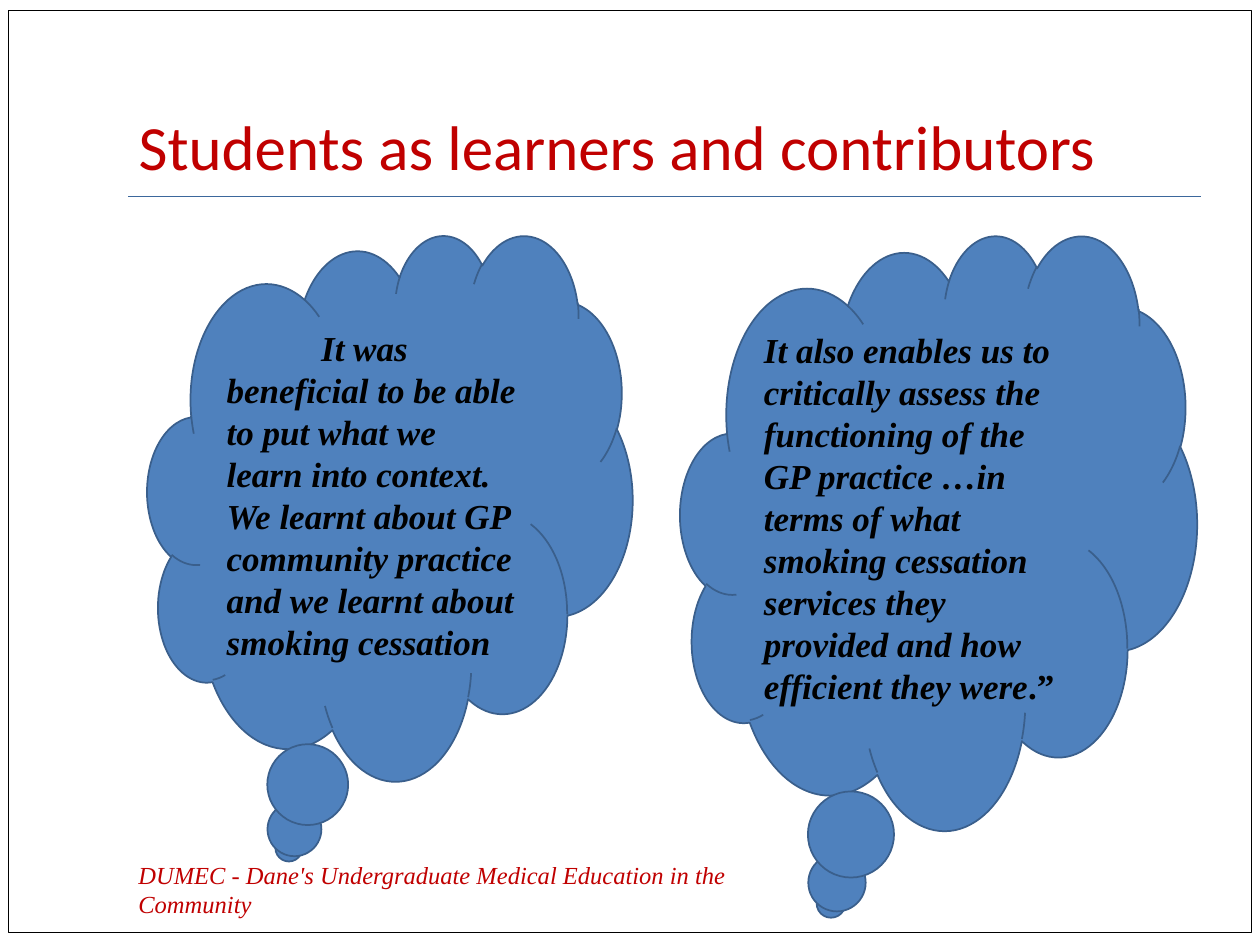
from pptx import Presentation, util as u
from pptx.dml.color import RGBColor
from pptx.enum import shapes, text
from pptx.oxml.ns import qn
from lxml import etree

COLORS = {"paper": "FFFFFF", "ink": "000000", "accent": "C00000",
          "cloud": "4F81BD", "edge": "3A5F8C", "rule": "3B679C"}
COLS, ROWS = 20, 15
QUOTES = [
    ((10.8, 3.72, 8.2, 9.44), 0,
     [("It also enables us to critically assess the functioning of the GP practice …in terms "
       "of what smoking cessation services they provided and how efficient they were", True),
      (".”", False)]),
    ((2.34, 3.72, 7.7, 8.66), 0.75,
     [("It was beneficial to be able to put what we learn into context. We learnt about GP "
       "community practice and we learnt about smoking cessation", True)]),
]


class Deck:
    """Holds the style, the grid and the current slide."""

    def __init__(self):
        self.prs = Presentation()
        self.prs.slide_width, self.prs.slide_height = u.Inches(10), u.Inches(7.5)
        self.s = self.prs.slides.add_slide(self.prs.slide_layouts[5])

    def box(self, col, row, cols, rows):
        dx, dy = self.prs.slide_width / COLS, self.prs.slide_height / ROWS
        return [u.Emu(round(v)) for v in (col * dx, row * dy, cols * dx, rows * dy)]

    def color(self, name):
        return RGBColor.from_string(COLORS[name])

    def line(self, target, name, width):
        target.line.color.rgb = self.color(name)
        target.line.width = u.Pt(width)

    def set_text(self, tf, runs, anchor, color, **font):
        """Fill the first paragraph with (text, italic) runs."""
        tf.word_wrap, tf.vertical_anchor = True, anchor
        p = tf.paragraphs[0]
        p.alignment = text.PP_ALIGN.LEFT
        for words, italic in runs:
            r = p.add_run()
            r.text = words
            r.font.color.rgb = self.color(color)
            for key, value in {**font, "italic": italic}.items():
                setattr(r.font, key, value)
        return p

    def shape(self, kind, place, fill, edge, width):
        sp = self.s.shapes.add_shape(kind, *self.box(*place))
        sp.shadow.inherit = False
        sp.fill.solid()
        sp.fill.fore_color.rgb = self.color(fill)
        self.line(sp, edge, width)
        return sp

    def frame(self, place):
        sp = self.shape(shapes.MSO_SHAPE.ROUNDED_RECTANGLE, place, "paper", "ink", 0.5)
        sp.adjustments[0] = 0

    def rule(self, col, row, cols):
        x, y, width, _ = self.box(col, row, cols, 0)
        c = self.s.shapes.add_connector(shapes.MSO_CONNECTOR.STRAIGHT, x, y, x + width, y)
        self.line(c, "rule", 0.75)
        etree.SubElement(c.element.spPr, qn("a:effectLst"))

    def title(self, place, words):
        sp = self.s.shapes.title
        sp.left, sp.top, sp.width, sp.height = self.box(*place)
        sp.element.getparent().append(sp.element)  # bring in front of the frame
        tf = sp.text_frame
        tf.margin_bottom = u.Inches(0.1)
        self.set_text(tf, [(words, False)], text.MSO_ANCHOR.BOTTOM, "accent",
                      size=u.Pt(36), name="Calibri")

    def footer(self, place, words):
        tf = self.s.shapes.add_textbox(*self.box(*place)).text_frame
        self.set_text(tf, [(words, True)], text.MSO_ANCHOR.MIDDLE, "accent",
                      size=u.Pt(14), name="Times New Roman")

    def thought(self, place, indent, runs):
        sp = self.shape(shapes.MSO_SHAPE.CLOUD_CALLOUT, place, "cloud", "edge", 1)
        p = self.set_text(sp.text_frame, runs, text.MSO_ANCHOR.MIDDLE, "ink",
                          size=u.Pt(20), name="Times New Roman", bold=True)
        if indent:
            p._p.get_or_add_pPr().set("indent", str(u.Inches(indent)))


def main():
    deck = Deck()
    deck.frame((0.14, 0.16, 19.72, 14.64))
    deck.rule(2.04, 3.12, 17.02)
    deck.title((2, 0.6, 17, 2.5), "Students as learners and contributors")
    deck.footer((2, 13.72, 11.12, 0.78),
                "DUMEC - Dane's Undergraduate Medical Education in the Community")
    for quote in QUOTES:
        deck.thought(*quote)
    deck.prs.save("out.pptx")


if __name__ == "__main__":
    main()
